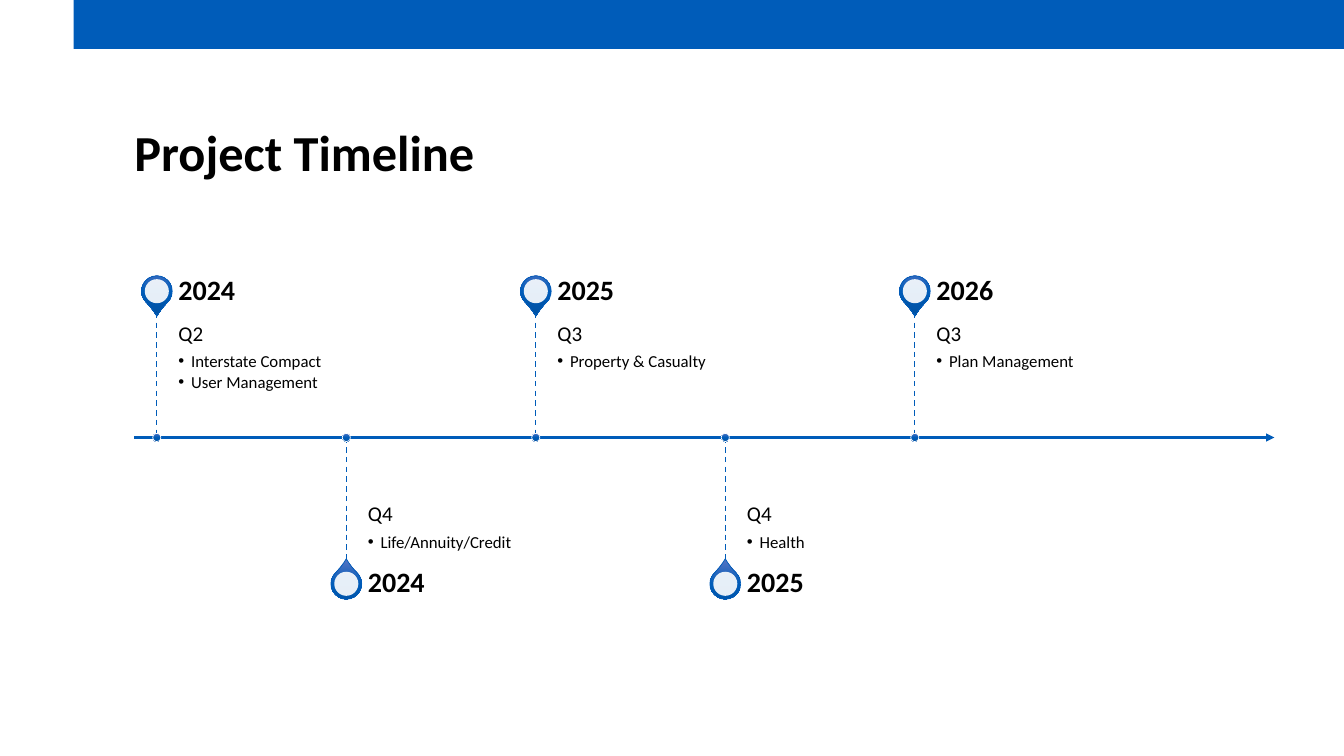
from lxml.etree import SubElement
from pptx import Presentation
from pptx.dml.color import RGBColor
from pptx.enum.dml import MSO_LINE
from pptx.enum.shapes import MSO_CONNECTOR, MSO_SHAPE
from pptx.enum.text import MSO_ANCHOR
from pptx.oxml import parse_xml
from pptx.oxml.ns import nsdecls, qn
from pptx.util import Pt

BLUE = "005CB9"
GRADIENT = [(0, "4B71C2"), (50, BLUE), (100, "0052A4")]
AXIS_X, AXIS_Y, AXIS_W = 96, 312.5, 814.3
FIRST_X, STEP = 112, 135.36
STEM, HEADING_H, TEXT_W = 89, 31, 225.4

MILESTONES = [
    ("2024", "Q2", ["Interstate Compact", "User Management"]),
    ("2024", "Q4", ["Life/Annuity/Credit"]),
    ("2025", "Q3", ["Property & Casualty"]),
    ("2025", "Q4", ["Health"]),
    ("2026", "Q3", ["Plan Management"]),
]


def rgb(color):
    return RGBColor.from_string(color)


def add_filled(s, kind, x, y, w, h, color, line=None):
    sp = s.shapes.add_shape(kind, Pt(x), Pt(y), Pt(w), Pt(h))
    sp.shadow.inherit = False
    sp.fill.solid()
    sp.fill.fore_color.rgb = rgb(color)
    if line:
        sp.line.color.rgb = rgb(line)
        sp.line.width = Pt(0.5)
    else:
        sp.line.fill.background()
    return sp


def add_centred(s, kind, cx, cy, size, color, line=None):
    return add_filled(s, kind, cx - size / 2, cy - size / 2, size, size, color, line)


def shade(sp):
    """Replace the solid fill by the vertical blue gradient."""
    stops = "".join(f'<a:gs pos="{pos * 1000}"><a:srgbClr val="{color}"/></a:gs>'
                    for pos, color in GRADIENT)
    grad = parse_xml(f'<a:gradFill {nsdecls("a")} rotWithShape="0"><a:gsLst>{stops}</a:gsLst>'
                     '<a:lin ang="5400000" scaled="0"/></a:gradFill>')
    solid = sp._element.spPr.find(qn("a:solidFill"))
    solid.getparent().replace(solid, grad)


def add_line(s, x1, y1, x2, y2, width):
    cxn = s.shapes.add_connector(MSO_CONNECTOR.STRAIGHT, Pt(x1), Pt(y1), Pt(x2), Pt(y2))
    cxn.line.color.rgb = rgb(BLUE)
    cxn.line.width = Pt(width)
    SubElement(cxn._element.spPr, qn("a:effectLst"))
    return cxn


def add_text(s, x, y, w, h, anchor, top=0, bottom=0):
    tf = s.shapes.add_textbox(Pt(x), Pt(y), Pt(w), Pt(h)).text_frame
    tf.word_wrap = True
    tf.vertical_anchor = anchor
    tf.margin_left = tf.margin_right = 0
    tf.margin_top, tf.margin_bottom = Pt(top), Pt(bottom)
    return tf


def write(p, text, size, bold=False, after=0):
    p.text = text
    p.line_spacing = 0.9
    p.space_after = Pt(after)
    font = p.runs[0].font
    font.name, font.size, font.bold = "Calibri", Pt(size), bold
    font.color.rgb = rgb("000000")


def add_bullet(p):
    pPr = p._p.get_or_add_pPr()
    pPr.set("marL", str(Pt(9)))
    pPr.set("indent", str(-Pt(9)))
    SubElement(pPr, qn("a:buFont")).set("typeface", "Arial")
    SubElement(pPr, qn("a:buChar")).set("char", "•")


def header(s, x, y, w):
    add_filled(s, MSO_SHAPE.RECTANGLE, x, y, 960 - x, 35, BLUE)
    tf = add_text(s, AXIS_X, y + 88, w, 42.3, MSO_ANCHOR.BOTTOM)
    write(tf.paragraphs[0], "Project Timeline", 36, bold=True)


def milestone(s, x, y, above, year, quarter, items):
    """Place a pin, stem and texts above or below the axis point (x, y)."""
    way = -1 if above else 1
    tip = y + way * STEM
    pin_y = tip + way * HEADING_H / 2
    text_x = x + 15.5

    pin = add_centred(s, MSO_SHAPE.TEAR, x, pin_y, 22, BLUE, BLUE)
    pin.adjustments[0] = 1.15
    pin.rotation = 135 if above else 315
    shade(pin)
    eye = add_centred(s, MSO_SHAPE.OVAL, x, pin_y, 17.2, "FFFFFF")
    color = eye._element.spPr.find(qn("a:solidFill"))[0]
    SubElement(color, qn("a:alpha")).set("val", "90000")

    if above:
        tf = add_text(s, text_x, tip, TEXT_W, STEM, MSO_ANCHOR.TOP, 7.2, 11.5)
    else:
        tf = add_text(s, text_x, y, TEXT_W, STEM, MSO_ANCHOR.BOTTOM, 11.5, 7.2)
    write(tf.paragraphs[0], quarter, 15, after=5.25)
    for item in items:
        p = tf.add_paragraph()
        add_bullet(p)
        write(p, item, 12, after=1.8)

    tf = add_text(s, text_x, pin_y - HEADING_H / 2, TEXT_W, HEADING_H, MSO_ANCHOR.MIDDLE)
    write(tf.paragraphs[0], year, 20, bold=True)

    stem = add_line(s, x, min(y, tip), x, max(y, tip), 1)
    stem.line.dash_style = MSO_LINE.DASH
    shade(add_centred(s, MSO_SHAPE.OVAL, x, y, 5.8, BLUE, "FFFFFF"))


def timeline(s, x, y, w):
    axis = add_line(s, x, y, x + w, y, 1.5)
    SubElement(axis.line._get_or_add_ln(), qn("a:tailEnd")).set("type", "triangle")
    for i, (year, quarter, items) in enumerate(MILESTONES):
        milestone(s, FIRST_X + i * STEP, y, i % 2 == 0, year, quarter, items)


def main():
    prs = Presentation()
    prs.slide_width, prs.slide_height = Pt(960), Pt(540)
    s = prs.slides.add_slide(prs.slide_layouts[6])
    header(s, 52.6, 0, AXIS_W)
    timeline(s, AXIS_X, AXIS_Y, AXIS_W)
    prs.save("out.pptx")


if __name__ == "__main__":
    main()
